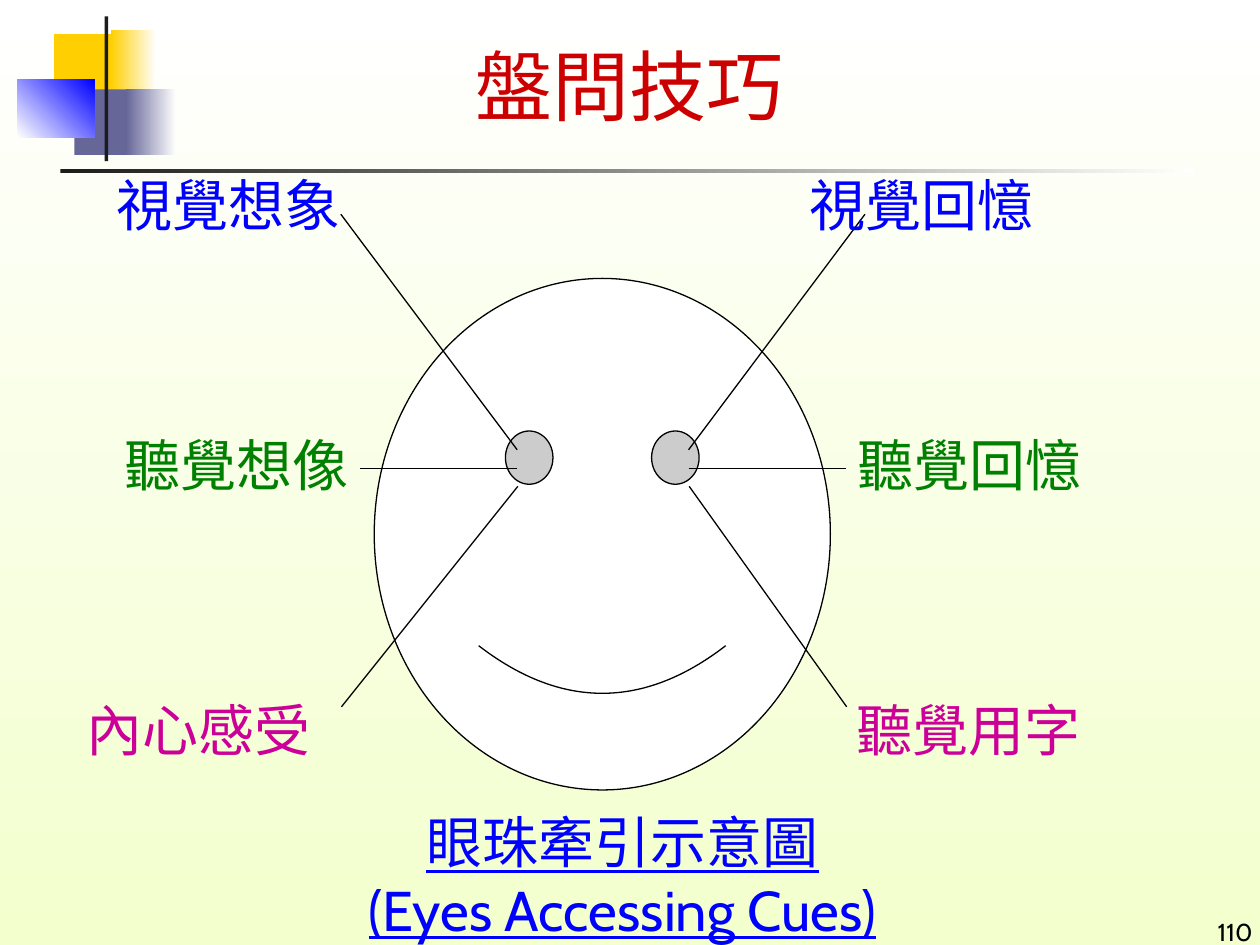
from lxml import etree
from pptx import Presentation, util as u
from pptx.dml.color import RGBColor
from pptx.enum import shapes, text
from pptx.oxml import ns

WHITE = RGBColor(0xFF, 0xFF, 0xFF)
BLACK = RGBColor(0, 0, 0)
INK = RGBColor(0x1C, 0x1C, 0x1C)
CREAM = RGBColor(0xF3, 0xFF, 0xCD)
YELLOW = RGBColor(0xFF, 0xCF, 0x01)
SLATE = RGBColor(0x66, 0x66, 0x99)
BLUE = RGBColor(0, 0, 0xFF)
RED = RGBColor(0xCC, 0, 0)
GREEN = RGBColor(0, 0x80, 0)
MAGENTA = RGBColor(0xCC, 0, 0x99)

CJK_FONT = "Noto Sans CJK SC"
LATIN_FONT = "Cabin"
LEFT, CENTER, RIGHT = text.PP_ALIGN.LEFT, text.PP_ALIGN.CENTER, text.PP_ALIGN.RIGHT
MIDDLE, BOTTOM = text.MSO_ANCHOR.MIDDLE, text.MSO_ANCHOR.BOTTOM


def inches(*lengths):
    return [u.Inches(length) for length in lengths]


class Painter:
    """Holds the slide and the style shared by its elements."""

    line_width = u.Pt(0.75)

    def __init__(self, slide):
        self.slide = slide

    def gradient(self, fill, start, end, angle=0):
        fill.gradient()
        fill.gradient_angle = angle
        for stop, color, position in zip(fill.gradient_stops, (start, end), (0, 1)):
            stop.color.rgb = color
            stop.position = position

    def shape(self, kind, box, color, fade_to=None, angle=0, outline=None):
        shape = self.slide.shapes.add_shape(kind, *inches(*box))
        shape.shadow.inherit = False
        if fade_to is None:
            shape.fill.solid()
            shape.fill.fore_color.rgb = color
        else:
            self.gradient(shape.fill, color, fade_to, angle)
        if outline is None:
            shape.line.fill.background()
        else:
            shape.line.color.rgb = outline
            shape.line.width = self.line_width

    def line(self, start, end):
        line = self.slide.shapes.add_connector(
            shapes.MSO_CONNECTOR.STRAIGHT, *inches(*start, *end))
        line.line.color.rgb = BLACK
        line.line.width = self.line_width
        etree.SubElement(line._element.spPr, ns.qn("a:effectLst"))

    def text(self, content, box, color, size=32, font=CJK_FONT, align=LEFT,
             anchor=MIDDLE, underline=None, spacing=None):
        frame = self.slide.shapes.add_textbox(*inches(*box)).text_frame
        frame.word_wrap = True
        frame.vertical_anchor = anchor
        frame.text = content
        for paragraph in frame.paragraphs:
            paragraph.alignment = align
            paragraph.line_spacing = spacing
            for run in paragraph.runs:
                run.font.name = font
                run.font.size = u.Pt(size)
                run.font.color.rgb = color
                run.font.underline = underline
                east_asian = etree.SubElement(run.font._element, ns.qn("a:ea"))
                east_asian.set("typeface", CJK_FONT)


def main():
    deck = Presentation()
    deck.slide_width, deck.slide_height = inches(10, 7.5)
    slide = deck.slides.add_slide(deck.slide_layouts[6])
    painter = Painter(slide)
    painter.gradient(slide.background.fill, WHITE, CREAM, 270)

    # Corner ornament and title rule
    rect = shapes.MSO_SHAPE.RECTANGLE
    for box, color, fade_to, angle in (
        ((0.43, 0.27, 0.48, 0.52), YELLOW, None, 0),
        ((0.88, 0.24, 0.36, 0.52), YELLOW, WHITE, 0),
        ((0.59, 0.71, 0.46, 0.52), SLATE, None, 0),
        ((1, 0.71, 0.4, 0.52), SLATE, WHITE, 0),
        ((0.14, 0.63, 0.61, 0.46), WHITE, BLUE, 45),
        ((0.83, 0.13, 0.03, 1.15), INK, None, 0),
        ((0.48, 1.34, 9, 0.03), INK, WHITE, 0),
    ):
        painter.shape(rect, box, color, fade_to, angle)

    painter.text("盤問技巧", (0.5, 0.23, 9, 0.89), RED, size=44, align=CENTER)

    # Face with sight lines, mirrored about the middle of the eyes
    painter.shape(shapes.MSO_SHAPE.SMILEY_FACE, (2.97, 2.21, 3.62, 4.06),
                  WHITE, outline=BLACK)
    axis = 4.785
    for eye_gap, eye_y, reach, end_y in (
        (0.68, 3.57, 2.08, 1.7),
        (0.68, 3.72, 1.93, 3.72),
    ):
        for side in (-1, 1):
            painter.line((axis + side * eye_gap, eye_y), (axis + side * reach, end_y))
    painter.line((4.11, 3.86), (2.71, 5.61))
    painter.line((5.47, 3.86), (6.72, 5.61))

    # Cue labels: one row per sense
    for top, color, cues in (
        (1.3, BLUE, (("視覺想象", 0.83), ("視覺回憶", 6.33))),
        (3.36, GREEN, (("聽覺想像", 0.89), ("聽覺回憶", 6.71))),
        (5.47, MAGENTA, (("內心感受", 0.59), ("聽覺用字", 6.7))),
    ):
        for cue, left in cues:
            painter.text(cue, (left, top, 2.3, 0.64), color)

    # Caption and page number
    painter.text("眼珠牽引示意圖\n(Eyes Accessing Cues)", (2.44, 6.35, 5, 1.18), BLUE,
                 font=LATIN_FONT, align=CENTER, underline=True, spacing=u.Pt(39))
    painter.text("110", (7.96, 7.06, 2.08, 0.5), BLACK, size=14,
                 font=LATIN_FONT, align=RIGHT, anchor=BOTTOM)

    deck.save("out.pptx")


if __name__ == "__main__":
    main()
